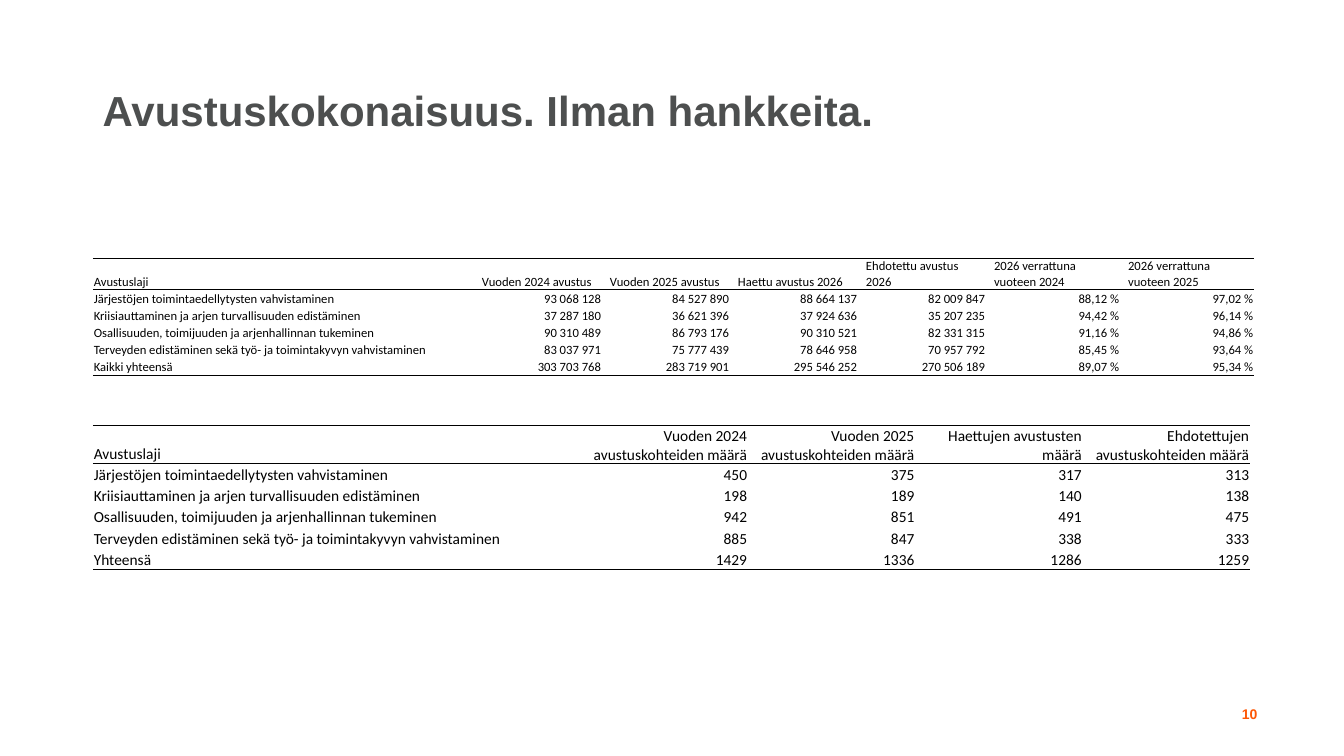
from dataclasses import dataclass

from lxml.etree import SubElement
from pptx import Presentation
from pptx.dml.color import RGBColor
from pptx.enum.text import MSO_ANCHOR, PP_ALIGN
from pptx.oxml.ns import qn
from pptx.util import Inches, Pt


@dataclass(frozen=True)
class Theme:
    heading_font: str = "Arial"
    table_font: str = "Calibri"
    title_color: str = "4D4F4F"
    accent: str = "FD5705"
    ink: str = "000000"
    title_size: int = 30
    page_size: int = 10
    amounts_size: int = 9
    counts_size: int = 11
    rule_width: float = 0.5


THEME = Theme()
GRANT_TYPES = [
    "Järjestöjen toimintaedellytysten vahvistaminen",
    "Kriisiauttaminen ja arjen turvallisuuden edistäminen",
    "Osallisuuden, toimijuuden ja arjenhallinnan tukeminen",
    "Terveyden edistäminen sekä työ- ja toimintakyvyn vahvistaminen",
]
AMOUNT_HEADERS = [
    "Avustuslaji", "Vuoden 2024 avustus", "Vuoden 2025 avustus", "Haettu avustus 2026",
    "Ehdotettu avustus 2026", "2026 verrattuna vuoteen 2024", "2026 verrattuna vuoteen 2025",
]
AMOUNTS = [
    ["93 068 128", "84 527 890", "88 664 137", "82 009 847", "88,12 %", "97,02 %"],
    ["37 287 180", "36 621 396", "37 924 636", "35 207 235", "94,42 %", "96,14 %"],
    ["90 310 489", "86 793 176", "90 310 521", "82 331 315", "91,16 %", "94,86 %"],
    ["83 037 971", "75 777 439", "78 646 958", "70 957 792", "85,45 %", "93,64 %"],
    ["303 703 768", "283 719 901", "295 546 252", "270 506 189", "89,07 %", "95,34 %"],
]
COUNT_HEADERS = [
    "Avustuslaji", "Vuoden 2024 avustuskohteiden määrä", "Vuoden 2025 avustuskohteiden määrä",
    "Haettujen avustusten määrä", "Ehdotettujen avustuskohteiden määrä",
]
COUNTS = [
    ["450", "375", "317", "313"],
    ["198", "189", "140", "138"],
    ["942", "851", "491", "475"],
    ["885", "847", "338", "333"],
    ["1429", "1336", "1286", "1259"],
]


def set_attributes(target, values):
    for name, value in values.items():
        setattr(target, name, value)


def write_text(paragraph, text, font, size, color, bold=False, align=PP_ALIGN.LEFT):
    paragraph.alignment = align
    run = paragraph.add_run()
    run.text = text
    set_attributes(run.font, {"name": font, "size": Pt(size), "bold": bold})
    run.font.color.rgb = RGBColor.from_string(color)


def add_heading_text(slide, text, box, size, color, anchor, align=PP_ALIGN.LEFT, spacing=1.0):
    shape = slide.shapes.add_textbox(*(Inches(length) for length in box))
    set_attributes(shape.text_frame, {"word_wrap": True, "vertical_anchor": anchor})
    paragraph = shape.text_frame.paragraphs[0]
    paragraph.line_spacing = spacing
    write_text(paragraph, text, THEME.heading_font, size, color, True, align)


def set_borders(cell, ruled_sides):
    properties = cell._tc.get_or_add_tcPr()
    for side in "LRTB":
        line = SubElement(properties, qn(f"a:ln{side}"), w=str(Pt(THEME.rule_width)))
        if side in ruled_sides:
            fill = SubElement(line, qn("a:solidFill"))
            SubElement(fill, qn("a:srgbClr"), val=THEME.ink)
        else:
            SubElement(line, qn("a:noFill"))


def add_ruled_table(slide, top, widths, header_height, row_height, size,
                    headers, total_label, values, header_align, header_indent):
    labels = GRANT_TYPES + [total_label]
    rows = [headers] + [[label, *numbers] for label, numbers in zip(labels, values)]
    height = header_height + row_height * len(values)
    frame = slide.shapes.add_table(len(rows), len(widths), Inches(0.92), Inches(top),
                                   Inches(sum(widths)), Inches(height))
    table = frame.table
    set_attributes(table, {"first_row": False, "horz_banding": False})
    for column, width in zip(table.columns, widths):
        column.width = Inches(width)

    # Rules run above and below the header and below the total
    ruled_sides = {0: "TB", 1: "T", len(rows) - 1: "B"}
    for row_index, texts in enumerate(rows):
        table.rows[row_index].height = Inches(row_height if row_index else header_height)
        for column_index, text in enumerate(texts):
            cell = table.cell(row_index, column_index)
            align, indent = PP_ALIGN.LEFT, 0.01
            if column_index:
                align = PP_ALIGN.RIGHT if row_index else header_align
                indent = 0.01 if row_index else header_indent
            set_attributes(cell, {
                "margin_left": Inches(indent), "margin_right": Inches(0.01),
                "margin_top": Inches(0.01), "margin_bottom": 0,
                "vertical_anchor": MSO_ANCHOR.BOTTOM,
            })
            set_borders(cell, ruled_sides.get(row_index, ""))
            cell.fill.background()
            write_text(cell.text_frame.paragraphs[0], text, THEME.table_font, size,
                       THEME.ink, align=align)


def main():
    presentation = Presentation()
    set_attributes(presentation, {"slide_width": Inches(13.33), "slide_height": Inches(7.5)})
    slide = presentation.slides.add_slide(presentation.slide_layouts[6])

    # Title and page number
    add_heading_text(slide, "Avustuskokonaisuus. Ilman hankkeita.", (0.92, 0.4, 8.99, 1.45),
                     THEME.title_size, THEME.title_color, MSO_ANCHOR.MIDDLE, spacing=0.9)
    add_heading_text(slide, "10", (11.69, 6.95, 0.88, 0.4), THEME.page_size, THEME.accent,
                     MSO_ANCHOR.TOP, PP_ALIGN.RIGHT)

    # Grant amounts
    add_ruled_table(slide, 2.56, [3.78] + [1.27] * 4 + [1.33] * 2, 0.31, 0.17,
                    THEME.amounts_size, AMOUNT_HEADERS, "Kaikki yhteensä", AMOUNTS,
                    PP_ALIGN.LEFT, 0.08)

    # Numbers of grants
    add_ruled_table(slide, 4.22, [4.84] + [1.66] * 4, 0.38, 0.21,
                    THEME.counts_size, COUNT_HEADERS, "Yhteensä", COUNTS,
                    PP_ALIGN.RIGHT, 0.01)

    presentation.save("out.pptx")


if __name__ == "__main__":
    main()
